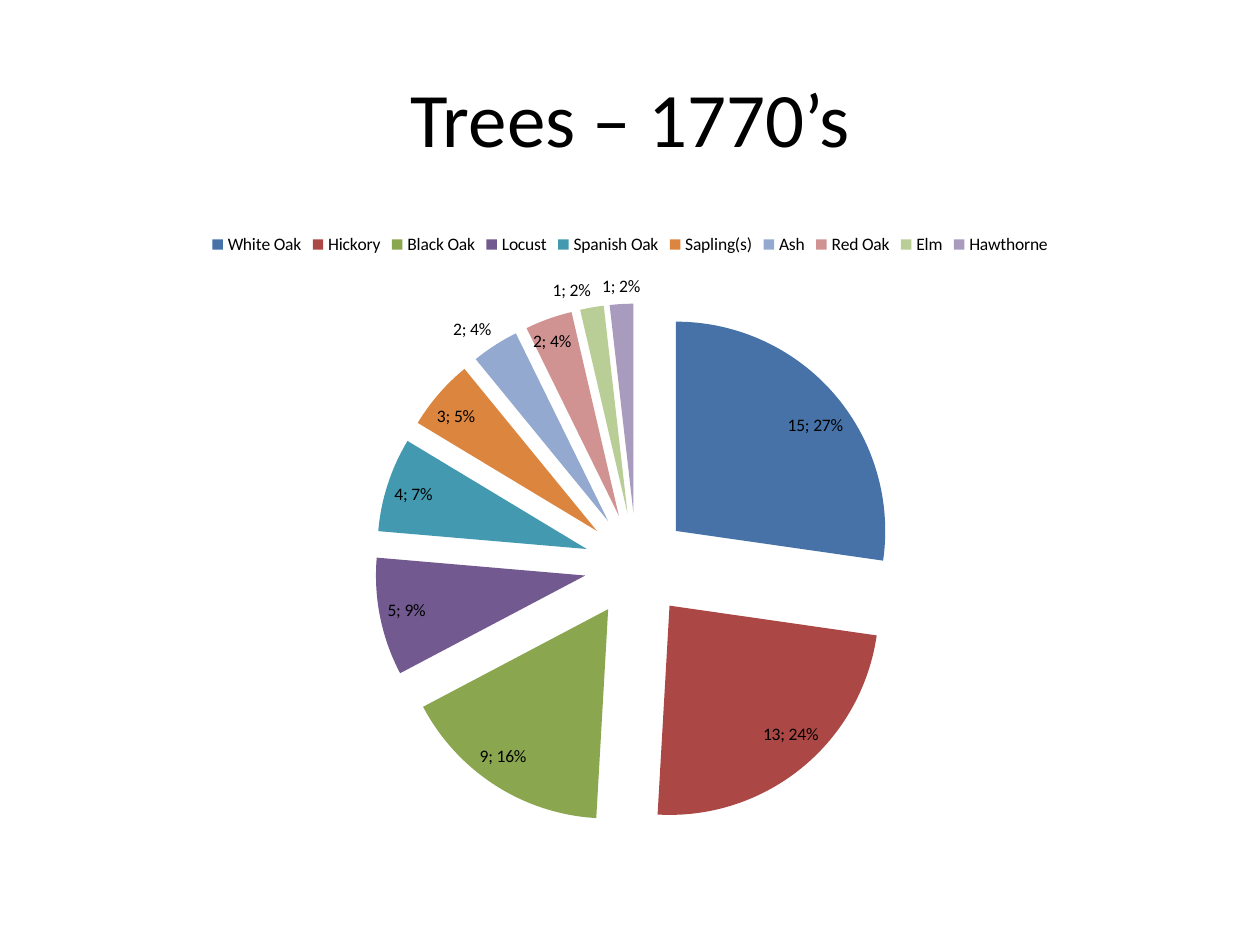
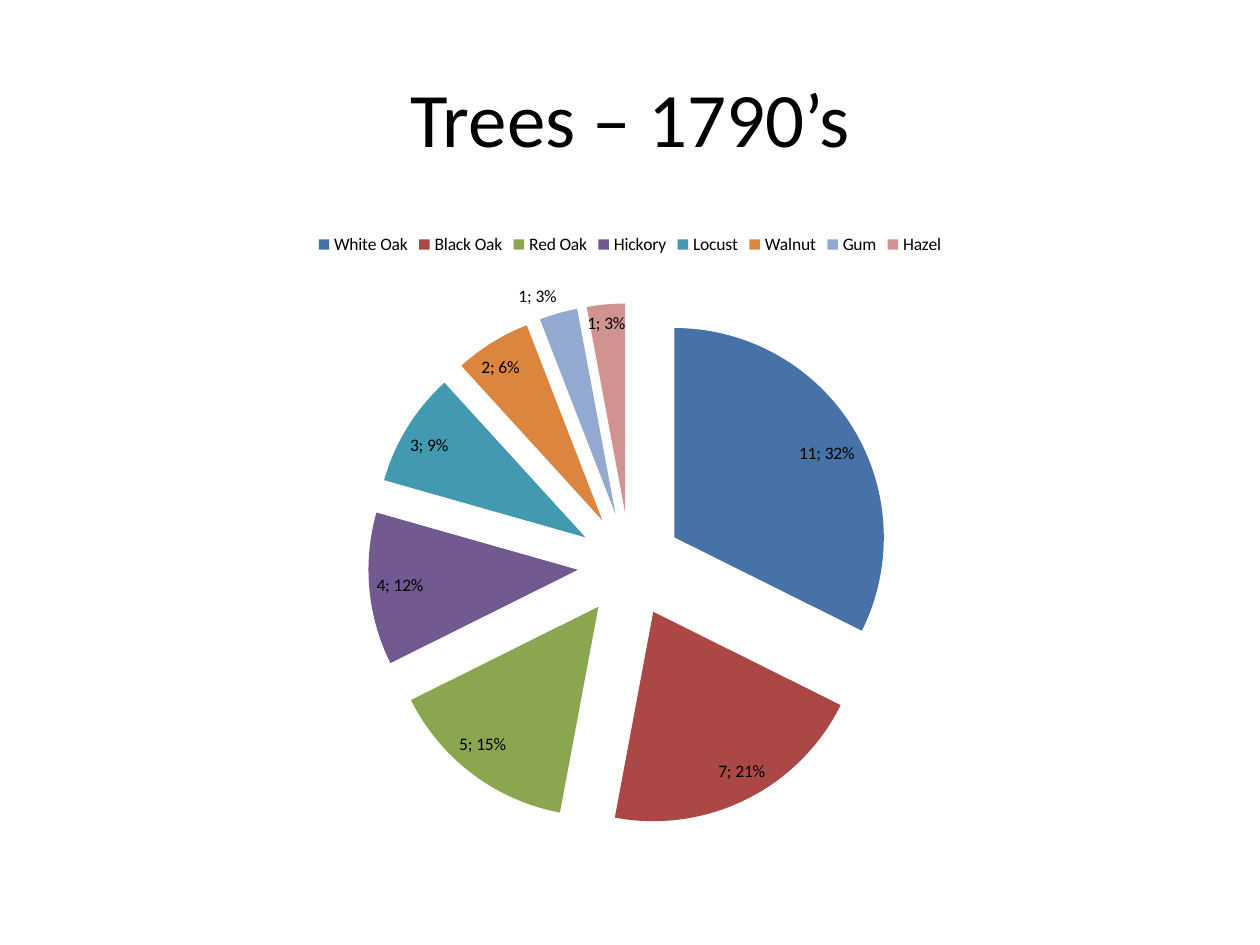
import lxml.etree
import pptx
import pptx.chart.data
import pptx.dml.color
import pptx.enum.chart
import pptx.enum.text
import pptx.oxml.ns
import pptx.util

Inches = pptx.util.Inches
RGBColor = pptx.dml.color.RGBColor

# Content
TREE_COUNTS = {
    "Trees – 1770’s": [
        ("White Oak", 15), ("Hickory", 13), ("Black Oak", 9), ("Locust", 5),
        ("Spanish Oak", 4), ("Sapling(s)", 3), ("Ash", 2), ("Red Oak", 2),
        ("Elm", 1), ("Hawthorne", 1),
    ],
    "Trees – 1790’s": [
        ("White Oak", 11), ("Black Oak", 7), ("Red Oak", 5), ("Hickory", 4),
        ("Locust", 3), ("Walnut", 2), ("Gum", 1), ("Hazel", 1),
    ],
}

# Shared style
FONT_NAME = "Calibri"
BLACK = RGBColor(0x00, 0x00, 0x00)
SLICE_COLORS = [
    RGBColor(0x46, 0x72, 0xA8), RGBColor(0xAB, 0x47, 0x44),
    RGBColor(0x8A, 0xA6, 0x4F), RGBColor(0x72, 0x59, 0x90),
    RGBColor(0x42, 0x99, 0xB0), RGBColor(0xDC, 0x85, 0x3E),
    RGBColor(0x93, 0xA9, 0xCF), RGBColor(0xD0, 0x93, 0x92),
    RGBColor(0xB9, 0xCD, 0x96), RGBColor(0xA9, 0x9B, 0xBD),
]
EXPLOSION_PERCENT = 25
TITLE_BOX = [Inches(value) for value in (0.5, 0.3, 9, 1.25)]
CHART_BOX = [Inches(value) for value in (0.5, 1.75, 9, 4.95)]


def format_font(font, size, color=BLACK):
    font.name = FONT_NAME
    font.size = pptx.util.Pt(size)
    font.color.rgb = color


def write_text(shape, text, size=44, color=BLACK,
               alignment=pptx.enum.text.PP_ALIGN.CENTER):
    frame = shape.text_frame
    frame.word_wrap = True
    frame.vertical_anchor = pptx.enum.text.MSO_ANCHOR.MIDDLE
    paragraph = frame.paragraphs[0]
    paragraph.alignment = alignment
    run = paragraph.add_run()
    run.text = text
    format_font(run.font, size, color)


def chart_element(name):
    return lxml.etree.Element(pptx.oxml.ns.qn(name))


def explode_slices(series):
    explosion = chart_element("c:explosion")
    explosion.set("val", str(EXPLOSION_PERCENT))
    series._element.find(pptx.oxml.ns.qn("c:tx")).addnext(explosion)


def label_slices(series):
    labels = series.data_labels
    labels.show_value = True
    labels.show_percentage = True
    labels.position = pptx.enum.chart.XL_LABEL_POSITION.BEST_FIT
    format_font(labels.font, 10)
    separator = chart_element("c:separator")
    separator.text = "; "
    labels._element.find(pptx.oxml.ns.qn("c:showBubbleSize")).addnext(separator)


def add_tree_pie(slide, trees):
    chart_data = pptx.chart.data.CategoryChartData()
    chart_data.categories = [name for name, count in trees]
    chart_data.add_series("Series 1", [count for name, count in trees])
    chart = slide.shapes.add_chart(
        pptx.enum.chart.XL_CHART_TYPE.PIE, *CHART_BOX, chart_data).chart
    format_font(chart.font, 10)
    chart.has_title = False

    # Legend above the pie
    chart.has_legend = True
    chart.legend.position = pptx.enum.chart.XL_LEGEND_POSITION.TOP
    chart.legend.include_in_layout = False
    format_font(chart.legend.font, 10)

    # Slices
    plot = chart.plots[0]
    plot.vary_by_categories = True
    series = plot.series[0]
    explode_slices(series)
    for index, color in enumerate(SLICE_COLORS[:len(trees)]):
        fill = series.points[index].format.fill
        fill.solid()
        fill.fore_color.rgb = color
    label_slices(series)


def add_tree_slide(presentation, title, trees):
    slide = presentation.slides.add_slide(presentation.slide_layouts[5])
    title_shape = slide.shapes.title
    (title_shape.left, title_shape.top,
     title_shape.width, title_shape.height) = TITLE_BOX
    write_text(title_shape, title)
    add_tree_pie(slide, trees)


def main():
    presentation = pptx.Presentation()
    presentation.slide_width = Inches(10)
    presentation.slide_height = Inches(7.5)
    for title, trees in TREE_COUNTS.items():
        add_tree_slide(presentation, title, trees)
    presentation.save("out.pptx")


if __name__ == "__main__":
    main()
